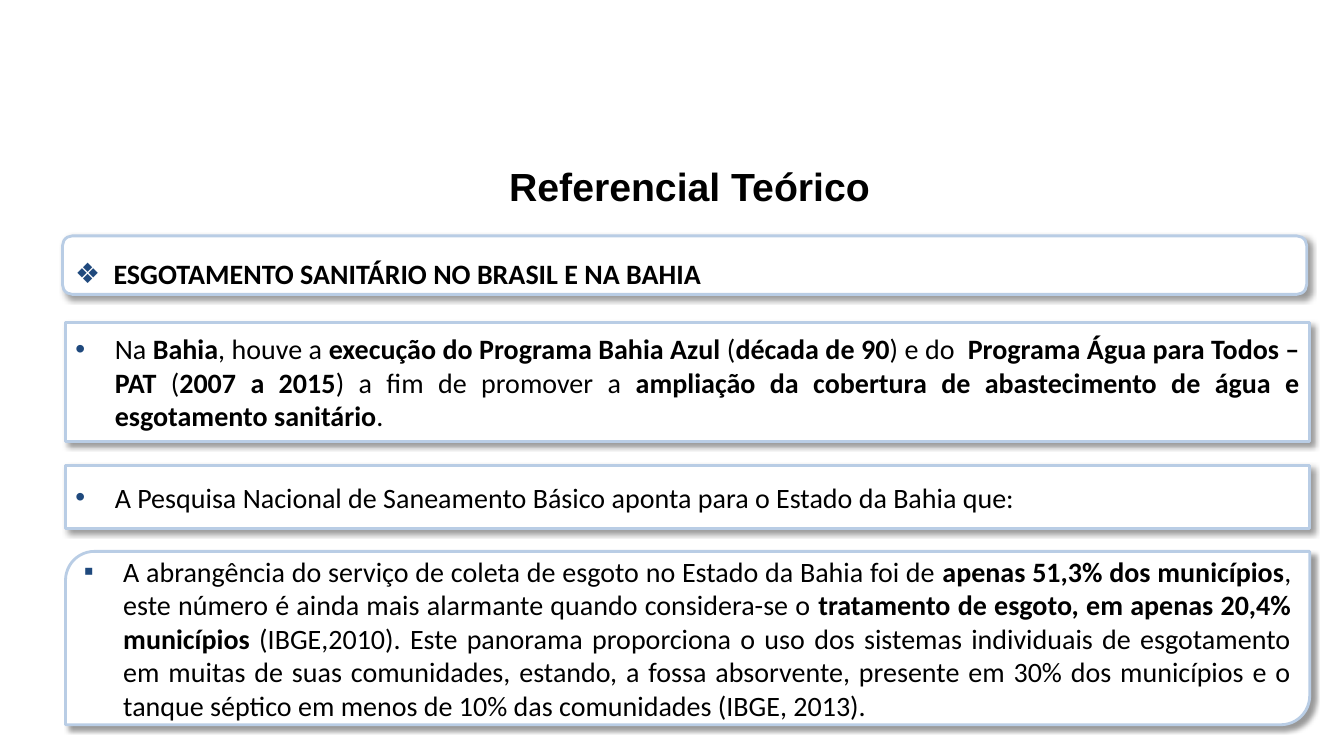
import pptx
import pptx.util
import pptx.dml.color
import pptx.enum.shapes
import pptx.enum.text
import lxml.etree

SHAPE = pptx.enum.shapes.MSO_SHAPE
ALIGN = pptx.enum.text.PP_ALIGN
ANCHOR = pptx.enum.text.MSO_ANCHOR
SLIDE_WIDTH, SLIDE_HEIGHT = 13.33, 7.5
PANEL_LEFT, PANEL_WIDTH = 0.65, 12.34
DRAWING_NS = "http://schemas.openxmlformats.org/drawingml/2006/main"

TITLE = "Referencial Teórico"
PANELS = [
    {"form": SHAPE.ROUNDED_RECTANGLE, "shift": -0.03, "top": 2.34, "height": 0.58,
     "bullet": "❖", "indent": 0.38, "spacing": 1.5,
     "text": "**ESGOTAMENTO SANITÁRIO NO BRASIL E NA BAHIA**"},
    {"form": SHAPE.RECTANGLE, "shift": 0, "top": 3.2, "height": 1.18,
     "bullet": "•", "indent": 0.39, "spacing": 1.0,
     "text": "Na **Bahia**, houve a **execução do Programa Bahia Azul** (**década de 90**) e do  "
             "**Programa Água para Todos – PAT **(**2007 a 2015**) a fim de promover a "
             "**ampliação da cobertura de abastecimento de água e esgotamento sanitário**."},
    {"form": SHAPE.RECTANGLE, "shift": 0, "top": 4.62, "height": 0.62,
     "bullet": "•", "indent": 0.39, "spacing": 1.0,
     "text": "A Pesquisa Nacional de Saneamento Básico aponta para o Estado da Bahia que:"},
    {"form": SHAPE.ROUND_2_DIAG_RECTANGLE, "shift": 0, "top": 5.47, "height": 1.72,
     "bullet": "▪", "indent": 0.39, "spacing": 1.0,
     "text": "A abrangência do serviço de coleta de esgoto no Estado da Bahia foi de "
             "**apenas 51,3% dos municípios**, este número é ainda mais alarmante quando "
             "considera-se o **tratamento de esgoto, em apenas 20,4% municípios **(IBGE,2010). "
             "Este panorama proporciona o uso dos sistemas individuais de esgotamento em muitas "
             "de suas comunidades, estando, a fossa absorvente, presente em 30% dos municípios e "
             "o tanque séptico em menos de 10% das comunidades (IBGE, 2013)."},
]


def color(value):
    return pptx.dml.color.RGBColor.from_string(value)


def inches(*lengths):
    return [pptx.util.Inches(length) for length in lengths]


def assign(target, **values):
    for name, value in values.items():
        setattr(target, name, value)


def write(paragraph, text, size, face):
    for position, words in enumerate(text.split("**")):
        if words:
            run = paragraph.add_run()
            run.text = words
            assign(run.font, size=pptx.util.Pt(size), name=face, bold=position % 2 == 1)
            run.font.color.rgb = color("000000")


def add_xml(parent, tag, **attributes):
    return lxml.etree.SubElement(parent, f"{{{DRAWING_NS}}}{tag}", attributes)


def add_shadow(panel):
    panel.shadow.inherit = False
    effects = panel._element.spPr.find(f"{{{DRAWING_NS}}}effectLst")
    shadow = add_xml(effects, "outerShdw", blurRad=str(pptx.util.Pt(4)),
                     dist=str(pptx.util.Pt(3)), dir="2700000", algn="tl", rotWithShape="0")
    add_xml(add_xml(shadow, "srgbClr", val="000000"), "alpha", val="40000")


def add_bullet(paragraph, mark, indent):
    properties = paragraph._p.get_or_add_pPr()
    properties.set("marL", str(pptx.util.Inches(indent)))
    properties.set("indent", str(-pptx.util.Inches(indent)))
    add_xml(add_xml(properties, "buClr"), "srgbClr", val="1F497D")
    add_xml(properties, "buFont", typeface="Arial")
    add_xml(properties, "buChar", char=mark)


def add_panel(slide, content):
    panel = slide.shapes.add_shape(content["form"], *inches(
        PANEL_LEFT + content["shift"], content["top"], PANEL_WIDTH, content["height"]))
    panel.fill.solid()
    panel.fill.fore_color.rgb = color("FFFFFF")
    panel.line.color.rgb = color("B9CDE5")
    panel.line.width = pptx.util.Pt(2)
    add_shadow(panel)
    assign(panel.text_frame, word_wrap=True, vertical_anchor=ANCHOR.MIDDLE)
    paragraph = panel.text_frame.paragraphs[0]
    add_bullet(paragraph, content["bullet"], content["indent"])
    assign(paragraph, alignment=ALIGN.JUSTIFY, line_spacing=content["spacing"])
    write(paragraph, content["text"], 20, "Calibri")


def main():
    deck = pptx.Presentation()
    deck.slide_width, deck.slide_height = inches(SLIDE_WIDTH, SLIDE_HEIGHT)
    slide = deck.slides.add_slide(deck.slide_layouts[5])
    title = slide.shapes.title
    title.left, title.top, title.width, title.height = inches(4.95, 1.56, 3.82, 0.57)
    assign(title.text_frame, word_wrap=True, vertical_anchor=ANCHOR.TOP,
           auto_size=pptx.enum.text.MSO_AUTO_SIZE.NONE)
    heading = title.text_frame.paragraphs[0]
    heading.alignment = ALIGN.LEFT
    write(heading, f"**{TITLE}**", 28, "Arial")
    for content in PANELS:
        add_panel(slide, content)
    deck.save("out.pptx")


if __name__ == "__main__":
    main()
